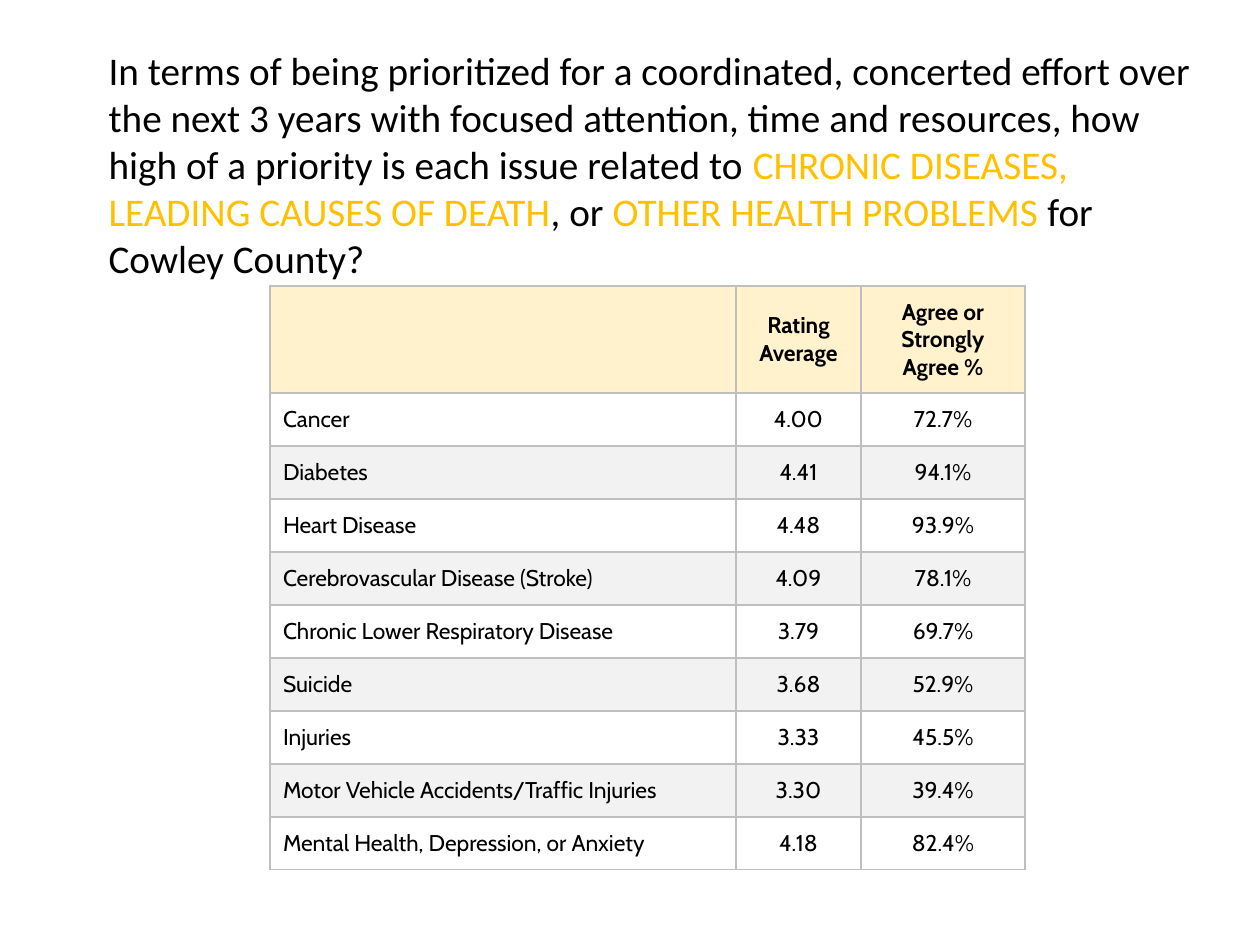
from dataclasses import dataclass

from lxml.etree import SubElement
from pptx import Presentation
from pptx.dml.color import RGBColor
from pptx.enum.text import MSO_ANCHOR, MSO_AUTO_SIZE, PP_ALIGN
from pptx.oxml.ns import qn
from pptx.util import Emu, Pt

PX = 914400 / 126


def px(length):
    return Emu(round(length * PX))


@dataclass(frozen=True)
class Theme:
    text: str = "000000"
    highlight: str = "FFC000"
    header_fill: str = "FFF2CC"
    band_fill: str = "F2F2F2"
    border: str = "BFBFBF"
    border_width: int = 1
    title_font: str = "Calibri"
    title_size: float = 22.4
    table_font: str = "Cabin"
    table_size: int = 13


class SlideBuilder:
    def __init__(self, slide, theme):
        self.slide = slide
        self.theme = theme

    def format_run(self, run, font, size, color, bold=False):
        run.font.name = font
        run.font.size = Pt(size)
        run.font.bold = bold
        run.font.color.rgb = RGBColor.from_string(color)

    def title(self, left, top, width, height, parts):
        """Fill the title from (text, highlighted) pairs."""
        title = self.slide.shapes.title
        title.left, title.top = px(left), px(top)
        title.width, title.height = px(width), px(height)
        frame = title.text_frame
        frame.word_wrap = True
        frame.auto_size = MSO_AUTO_SIZE.NONE
        frame.vertical_anchor = MSO_ANCHOR.TOP
        question = frame.paragraphs[0]
        question.alignment = PP_ALIGN.LEFT
        for wording, highlighted in parts:
            run = question.add_run()
            run.text = wording
            color = self.theme.highlight if highlighted else self.theme.text
            self.format_run(run, self.theme.title_font, self.theme.title_size, color)

    def border(self, cell):
        properties = cell._tc.get_or_add_tcPr()
        for position, side in enumerate(("a:lnL", "a:lnR", "a:lnT", "a:lnB")):
            line = SubElement(properties, qn(side), w=str(Pt(self.theme.border_width)))
            fill = SubElement(line, qn("a:solidFill"))
            SubElement(fill, qn("a:srgbClr"), val=self.theme.border)
            properties.insert(position, line)

    def cell(self, cell, wording, fill, centred, bold):
        cell.text_frame.text = wording
        cell.vertical_anchor = MSO_ANCHOR.MIDDLE
        cell.margin_left = cell.margin_right = px(13)
        cell.margin_top = cell.margin_bottom = px(12)
        if fill:
            cell.fill.solid()
            cell.fill.fore_color.rgb = RGBColor.from_string(fill)
        else:
            cell.fill.background()
        self.border(cell)
        paragraph = cell.text_frame.paragraphs[0]
        paragraph.alignment = PP_ALIGN.CENTER if centred else PP_ALIGN.LEFT
        for run in paragraph.runs:
            self.format_run(run, self.theme.table_font, self.theme.table_size,
                            self.theme.text, bold)

    def table(self, left, top, column_widths, header_height, row_height, rows):
        """Add a table whose first row is the header and every other body row is shaded."""
        heights = [header_height] + [row_height] * (len(rows) - 1)
        table = self.slide.shapes.add_table(
            len(rows), len(column_widths), px(left), px(top),
            px(sum(column_widths)), px(sum(heights))).table
        table.horz_banding = False
        for column, width in zip(table.columns, column_widths):
            column.width = px(width)
        for r, (values, height) in enumerate(zip(rows, heights)):
            table.rows[r].height = px(height)
            is_header = r == 0
            band = self.theme.band_fill if r % 2 == 0 else None
            fill = self.theme.header_fill if is_header else band
            for c, value in enumerate(values):
                self.cell(table.cell(r, c), value, fill, centred=c > 0, bold=is_header)


QUESTION = [
    ("In terms of being prioritized for a coordinated, concerted effort over the next "
     "3 years with focused attention, time and resources, how high of a priority is "
     "each issue related to ", False),
    ("CHRONIC DISEASES, LEADING CAUSES OF DEATH", True),
    (", or ", False),
    ("OTHER HEALTH PROBLEMS", True),
    (" for Cowley County?", False),
]

RATINGS = [
    ("", "Rating Average", "Agree or Strongly Agree %"),
    ("Cancer", "4.00", "72.7%"),
    ("Diabetes", "4.41", "94.1%"),
    ("Heart Disease", "4.48", "93.9%"),
    ("Cerebrovascular Disease (Stroke)", "4.09", "78.1%"),
    ("Chronic Lower Respiratory Disease", "3.79", "69.7%"),
    ("Suicide", "3.68", "52.9%"),
    ("Injuries", "3.33", "45.5%"),
    ("Motor Vehicle Accidents/Traffic Injuries", "3.30", "39.4%"),
    ("Mental Health, Depression, or Anxiety", "4.18", "82.4%"),
]


def main():
    presentation = Presentation()
    presentation.slide_width, presentation.slide_height = px(1260), px(945)
    title_only = presentation.slide_layouts[5]
    builder = SlideBuilder(presentation.slides.add_slide(title_only), Theme())
    builder.title(96, 40, 1125, 218, QUESTION)
    builder.table(270, 286, (466, 125, 164), 107, 53, RATINGS)
    presentation.save("out.pptx")


if __name__ == "__main__":
    main()
